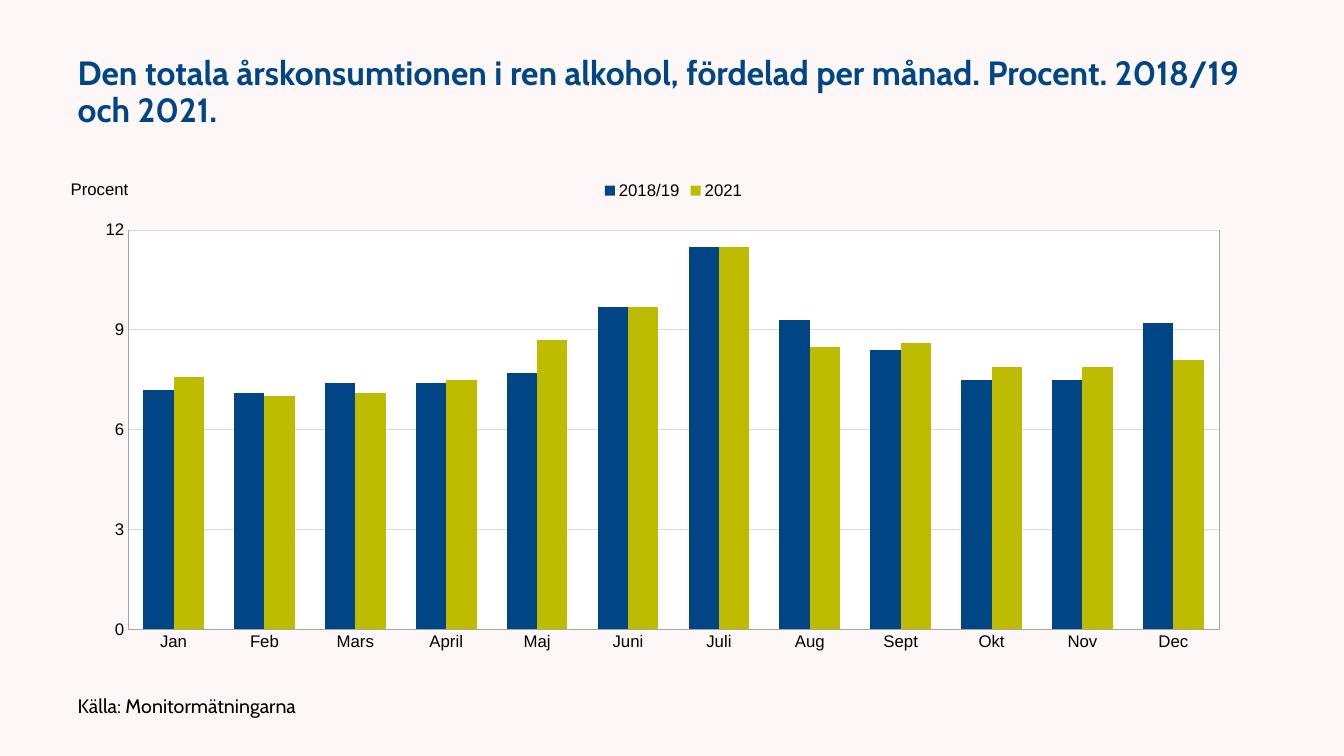
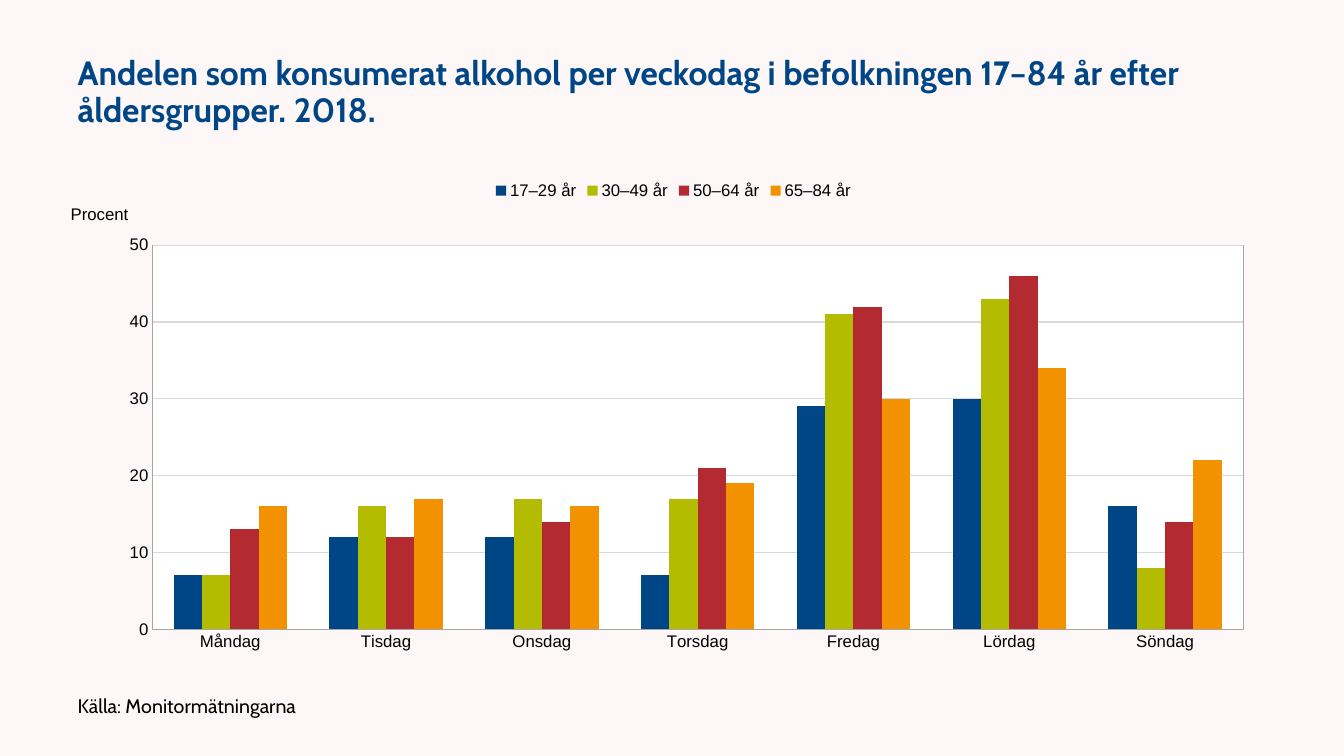
from lxml import etree
from pptx import Presentation
from pptx.chart.data import CategoryChartData
from pptx.dml.color import RGBColor
from pptx.enum.chart import XL_CHART_TYPE, XL_LEGEND_POSITION, XL_TICK_MARK
from pptx.enum.text import MSO_ANCHOR, MSO_AUTO_SIZE, PP_ALIGN
from pptx.oxml import parse_xml
from pptx.oxml.ns import nsdecls, qn
from pptx.util import Pt

COLUMNS = XL_CHART_TYPE.COLUMN_CLUSTERED
LEGEND_TOP = XL_LEGEND_POSITION.TOP
NO_TICKS = XL_TICK_MARK.NONE
PX = 9144  # EMU, 100 px to the inch

PAPER = RGBColor(0xFE, 0xF7, 0xF7)
BLACK = RGBColor(0x00, 0x00, 0x00)
BLUE = RGBColor(0x00, 0x46, 0x87)
OLIVE = RGBColor(0xBE, 0xBC, 0x00)
LIME = RGBColor(0xB3, 0xBC, 0x00)
RED = RGBColor(0xB3, 0x2B, 0x31)
ORANGE = RGBColor(0xF2, 0x92, 0x00)
AXIS_GREY = RGBColor(0xA6, 0xA6, 0xA6)
GRID_GREY = RGBColor(0xD9, 0xD9, 0xD9)

TITLE_FONT, CHART_FONT = "Cabin", "Arial"
TITLE_BOX = (67, 30, 1200, 125)
SOURCE_BOX = (67, 683, 600, 37)
CHART_BOX = (67, 169, 1202, 495)
SOURCE = "Källa: Monitormätningarna"
UNIT = "Procent"

CHARTS = [
    {
        "title": "Den totala årskonsumtionen i ren alkohol, fördelad per månad. "
                 "Procent. 2018/19 och 2021.",
        "categories": ["Jan", "Feb", "Mars", "April", "Maj", "Juni",
                       "Juli", "Aug", "Sept", "Okt", "Nov", "Dec"],
        "series": [
            ("2018/19", BLUE, [7.2, 7.1, 7.4, 7.4, 7.7, 9.7, 11.5, 9.3, 8.4, 7.5, 7.5, 9.2]),
            ("2021", OLIVE, [7.6, 7, 7.1, 7.5, 8.7, 9.7, 11.5, 8.5, 8.6, 7.9, 7.9, 8.1]),
        ],
        "top": 12, "step": 3, "gap": 100,
        "plot": (0.05, 0.12, 0.9, 0.8),
        "unit_at": (0, 0.01),
    },
    {
        "title": "Andelen som konsumerat alkohol per veckodag i befolkningen "
                 "17–84 år efter åldersgrupper. 2018.",
        "categories": ["Måndag", "Tisdag", "Onsdag", "Torsdag", "Fredag", "Lördag", "Söndag"],
        "series": [
            ("17–29 år", BLUE, [7, 12, 12, 7, 29, 30, 16]),
            ("30–49 år", LIME, [7, 16, 17, 17, 41, 43, 8]),
            ("50–64 år", RED, [13, 12, 14, 21, 42, 46, 14]),
            ("65–84 år", ORANGE, [16, 17, 16, 19, 30, 34, 22]),
        ],
        "top": 50, "step": 10, "gap": 150,
        "plot": (0.07, 0.15, 0.9, 0.77),
        "unit_at": (0, 0.06),
    },
]


def emu(box):
    return [length * PX for length in box]


def fill_placeholder(holder, box, text, size, color, bold):
    holder.left, holder.top, holder.width, holder.height = emu(box)
    frame = holder.text_frame
    frame.text = text
    frame.auto_size = MSO_AUTO_SIZE.NONE
    frame.vertical_anchor = MSO_ANCHOR.MIDDLE
    para = frame.paragraphs[0]
    para.alignment = PP_ALIGN.LEFT
    para.line_spacing = 0.9
    para.space_before = Pt(0)
    properties = para._p.get_or_add_pPr()
    properties.set("marL", "0")
    properties.set("indent", "0")
    etree.SubElement(properties, qn("a:buNone"))
    style_font(para.font, TITLE_FONT, size, color, bold)


def style_font(font, name, size, color, bold=False):
    font.name, font.size, font.bold = name, Pt(size), bold
    font.color.rgb = color


def set_layout(parent, index, fractions, inner=False):
    """Place a chart part by fractions (x, y and perhaps w, h) of the chart."""
    for old in parent.findall(qn("c:layout")):
        parent.remove(old)
    layout = etree.Element(qn("c:layout"))
    manual = etree.SubElement(layout, qn("c:manualLayout"))
    settings = [("layoutTarget", "inner")] if inner else []
    settings += [("xMode", "edge"), ("yMode", "edge")]
    settings += zip("xywh", fractions)
    for name, value in settings:
        etree.SubElement(manual, qn("c:" + name)).set("val", str(value))
    parent.insert(index, layout)


def style_line(line, color, width):
    line.color.rgb = color
    line.width = Pt(width)


def style_axes(chart, spec_data):
    for axis in (chart.category_axis, chart.value_axis):
        axis.major_tick_mark = axis.minor_tick_mark = NO_TICKS
        style_font(axis.tick_labels.font, CHART_FONT, 12, BLACK)
        style_line(axis.format.line, AXIS_GREY, 0.25)
    values = chart.value_axis
    values.minimum_scale, values.maximum_scale = 0, spec_data["top"]
    values.major_unit = spec_data["step"]
    values.tick_labels.number_format = "0"
    values.tick_labels.number_format_is_linked = False
    style_line(values.major_gridlines.format.line, GRID_GREY, 0.75)

    unit = values.axis_title
    unit.text_frame.text = UNIT
    style_font(unit.text_frame.paragraphs[0].font, CHART_FONT, 12, BLACK)
    body = unit._element.find(".//" + qn("a:bodyPr"))
    body.set("rot", "0")
    body.set("vert", "horz")
    set_layout(unit._element, 1, spec_data["unit_at"])


def frame_plot_area(chart, fractions):
    area = chart._chartSpace.find(".//" + qn("c:plotArea"))
    set_layout(area, 0, fractions, inner=True)
    area.append(parse_xml(
        f'<c:spPr {nsdecls("c", "a")}>'
        '<a:solidFill><a:srgbClr val="FFFFFF"/></a:solidFill>'
        f'<a:ln w="3175"><a:solidFill><a:srgbClr val="{AXIS_GREY}"/></a:solidFill></a:ln>'
        '</c:spPr>'))


def add_column_chart(slide, content):
    data = CategoryChartData(number_format="0")
    data.categories = content["categories"]
    for name, _, values in content["series"]:
        data.add_series(name, values)
    chart = slide.shapes.add_chart(COLUMNS, *emu(CHART_BOX), data).chart
    style_font(chart.font, CHART_FONT, 12, BLACK)
    chart.has_title = False
    chart.has_legend = True
    chart.legend.position = LEGEND_TOP
    chart.legend.include_in_layout = False
    style_font(chart.legend.font, CHART_FONT, 12, BLACK)

    plot = chart.plots[0]
    plot.gap_width, plot.overlap = content["gap"], 0
    plot.vary_by_categories = False
    for series, (_, color, _) in zip(plot.series, content["series"]):
        series.format.fill.solid()
        series.format.fill.fore_color.rgb = color
    style_axes(chart, content)
    frame_plot_area(chart, content["plot"])


def main():
    deck = Presentation()
    deck.slide_width, deck.slide_height = emu((1333, 750))
    background = deck.slide_master.background.fill
    background.solid()
    background.fore_color.rgb = PAPER
    for content in CHARTS:
        slide = deck.slides.add_slide(deck.slide_layouts[1])
        title, source = slide.placeholders
        fill_placeholder(title, TITLE_BOX, content["title"], 24, BLUE, True)
        fill_placeholder(source, SOURCE_BOX, SOURCE, 14, BLACK, False)
        add_column_chart(slide, content)
    deck.save("out.pptx")


if __name__ == "__main__":
    main()
